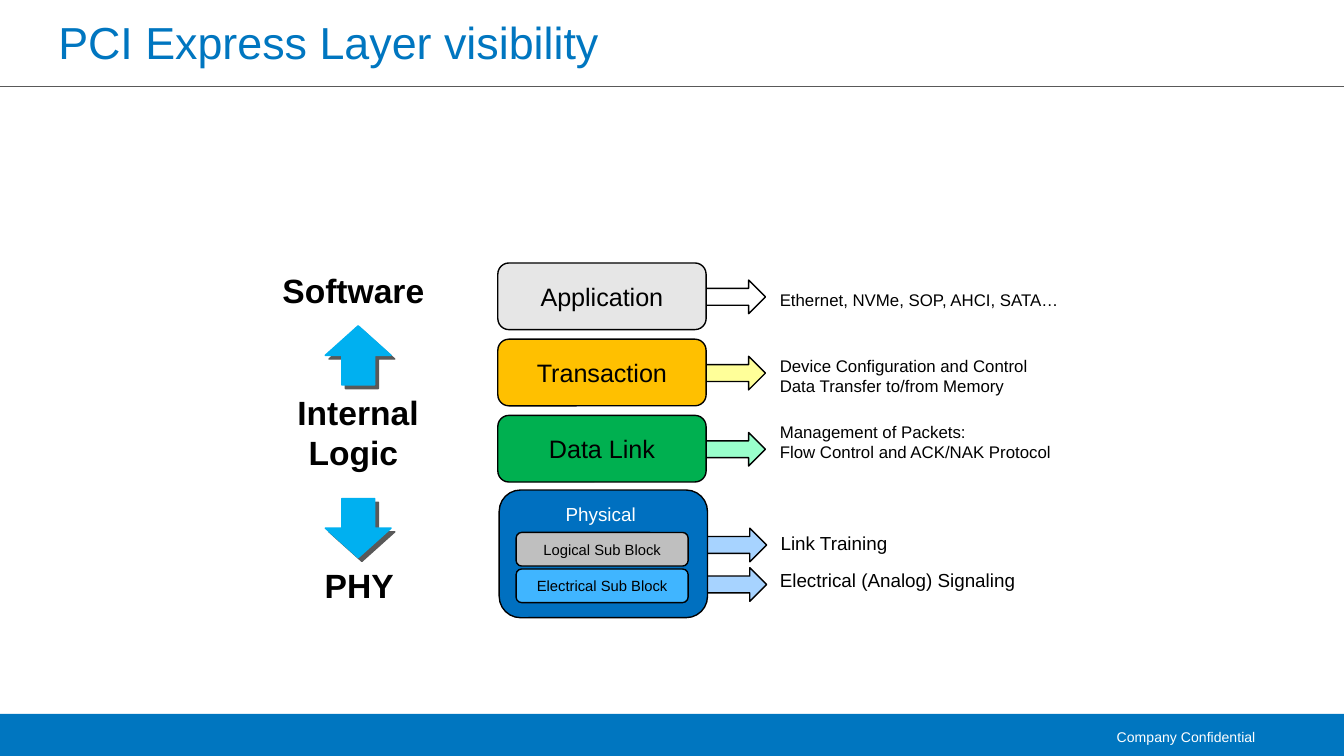
import pptx
import pptx.dml.color
import pptx.enum.shapes
import pptx.enum.text
import pptx.oxml.ns
import pptx.util
from lxml import etree

SHAPE = pptx.enum.shapes.MSO_SHAPE
ALIGN = pptx.enum.text.PP_ALIGN
ANCHOR = pptx.enum.text.MSO_ANCHOR
AUTOSIZE = pptx.enum.text.MSO_AUTO_SIZE
hex_color = pptx.dml.color.RGBColor.from_string
qn = pptx.oxml.ns.qn

deck = pptx.Presentation()
deck.slide_width = pptx.util.Inches(10)
deck.slide_height = deck.slide_width * 9 // 16
slide = deck.slides.add_slide(deck.slide_layouts[6])
COLUMN = ROW = deck.slide_width / 100


def draw(kind, left, top, width, height, fill, line="000000"):
    shape = slide.shapes.add_shape(kind, round(left * COLUMN), round(top * ROW),
                                   round(width * COLUMN), round(height * ROW))
    shape.shadow.inherit = False
    shape.fill.solid()
    shape.fill.fore_color.rgb = hex_color(fill)
    if line:
        shape.line.color.rgb = hex_color(line)
        shape.line.width = pptx.util.Pt(0.75)
    else:
        shape.line.fill.background()
    return shape


def write(shape, text, size, color="000000", align=ALIGN.LEFT, anchor=ANCHOR.TOP, bold=False):
    frame = shape.text_frame
    frame.vertical_anchor = anchor
    frame.text = text
    for paragraph in frame.paragraphs:
        paragraph.alignment = align
        paragraph.font.name = "Arial"
        paragraph.font.size = pptx.util.Pt(size)
        paragraph.font.bold = bold
        paragraph.font.color.rgb = hex_color(color)


draw(SHAPE.RECTANGLE, 0, 53.13, 100, 3.12, "0076C0", None)
divider = slide.shapes.add_connector(pptx.enum.shapes.MSO_CONNECTOR.STRAIGHT, 0, round(6.45 * ROW),
                                     deck.slide_width, round(6.45 * ROW))
divider.line.color.rgb = hex_color("595959")
divider.line.width = pptx.util.Pt(0.75)
etree.SubElement(divider._element.spPr, qn("a:effectLst"))

title_style = (24, "0076C0", ALIGN.LEFT, ANCHOR.MIDDLE)
footer_style = (7.5, "FFFFFF", ALIGN.RIGHT, ANCHOR.MIDDLE)
stage_style = (18, "000000", ALIGN.CENTER, ANCHOR.TOP, True)
labels = [
    (3.35, 0.6, 94.2, 5, True, "PCI Express Layer visibility", title_style),
    (80.4, 53.5, 14, 2.7, True, "Company Confidential", footer_style),
    (57.04, 21.04, 23.3, 2.5, False, "Ethernet, NVMe, SOP, AHCI, SATA…", (9,)),
    (57.04, 25.94, 20.6, 4, False, "Device Configuration and Control\nData Transfer to/from Memory", (9,)),
    (57.04, 30.9, 22.4, 4, False, "Management of Packets:\nFlow Control and ACK/NAK Protocol", (9,)),
    (57.04, 41.84, 19.8, 2.7, False, "Electrical (Analog) Signaling", (10.1,)),
    (57.1, 39.1, 10.2, 2.7, False, "Link Training", (10.1,)),
    (19.04, 19.6, 15.2, 4, True, "Software ", stage_style),
    (22.8, 41.54, 8.5, 4, True, "PHY ", stage_style),
    (20.5, 28.66, 12.3, 10.1, True, "Internal\nLogic ", stage_style),
]
for left, top, width, height, wrap, text, style in labels:
    label = slide.shapes.add_textbox(round(left * COLUMN), round(top * ROW),
                                     round(width * COLUMN), round(height * ROW))
    label.text_frame.word_wrap = wrap
    label.text_frame.auto_size = AUTOSIZE.NONE if wrap else AUTOSIZE.SHAPE_TO_FIT_TEXT
    write(label, text, *style)

for top, rotation in [(37.1, 0), (24.24, 180)]:
    direction = draw(SHAPE.DOWN_ARROW, 24.2, top, 4.9, 4.4, "00B0F0", "00B0F0")
    direction.rotation = rotation
    effects = direction._element.spPr.find(qn("a:effectLst"))
    shadow = etree.SubElement(effects, qn("a:outerShdw"), dist=str(pptx.util.Pt(2.8)),
                              dir=str(45 * 60000), algn="ctr", rotWithShape="0")
    etree.SubElement(shadow, qn("a:srgbClr"), val="595959")

layers = [
    ("Application", "E6E6E6", "FFFFFF"),
    ("Transaction", "FFC000", "FFFF99"),
    ("Data Link", "00B050", "99FFCC"),
]
LAYER_TOP, LAYER_PITCH = 19.57, 5.67
for row, (name, fill, arrow_fill) in enumerate(layers):
    top = LAYER_TOP + row * LAYER_PITCH
    draw(SHAPE.RIGHT_ARROW, 48.75, top + 1.27, 8.2, 2.5, arrow_fill)
    layer = draw(SHAPE.ROUNDED_RECTANGLE, 37.04, top, 15.5, 4.96, fill)
    write(layer, name, 13.5, align=ALIGN.CENTER, anchor=ANCHOR.MIDDLE)

for top in (39.3, 42.24):
    draw(SHAPE.RIGHT_ARROW, 48.84, top, 8.2, 2.5, "A7D3FF")
physical = draw(SHAPE.ROUNDED_RECTANGLE, 37.14, 36.46, 15.5, 9.5, "0070C0")
write(physical, "Physical ", 10.1, "FFFFFF", ALIGN.CENTER)
for top, name, fill in [(39.62, "Logical Sub Block", "BFBFBF"), (42.34, "Electrical Sub Block", "40B5FF")]:
    sub_block = draw(SHAPE.ROUNDED_RECTANGLE, 38.4, top, 12.8, 2.5, fill)
    write(sub_block, name, 7.9, align=ALIGN.CENTER)

deck.save("out.pptx")
